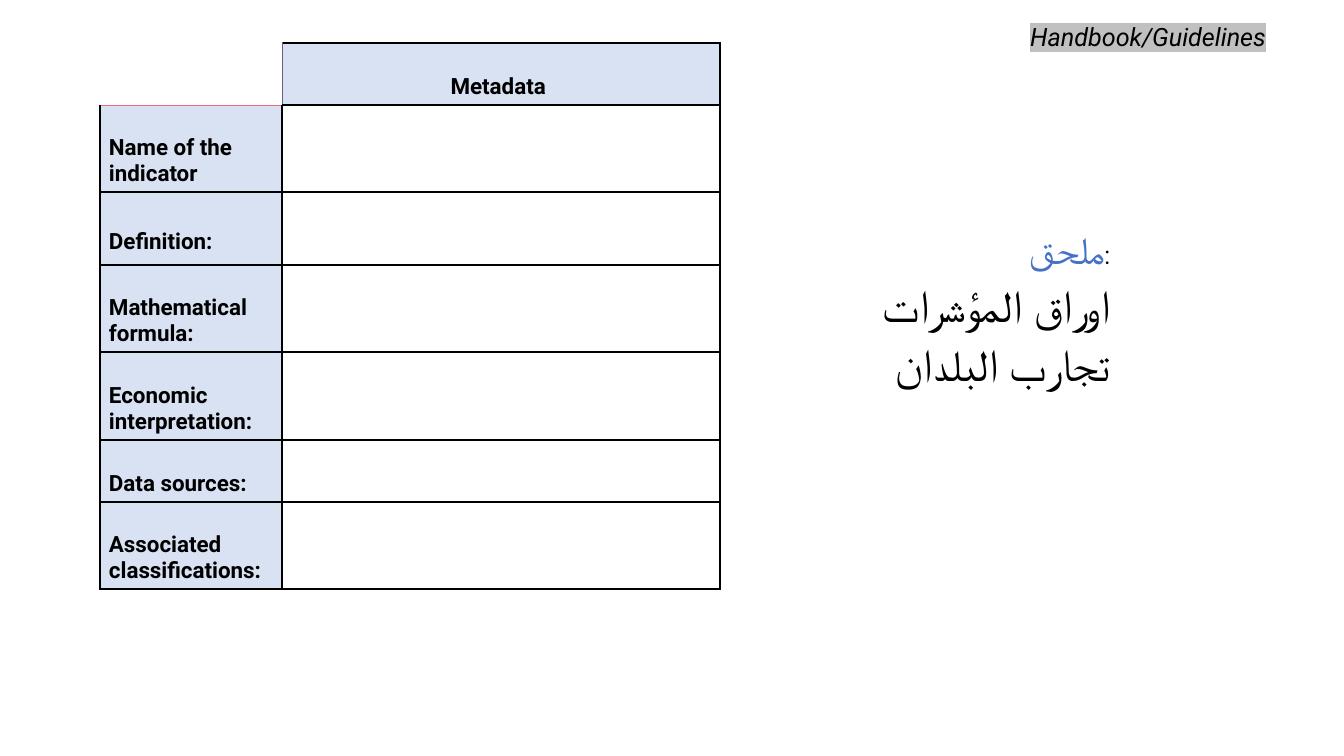
from dataclasses import dataclass
from typing import Any

from lxml.etree import SubElement
from pptx import Presentation
from pptx.dml.color import RGBColor
from pptx.enum.text import MSO_ANCHOR, PP_ALIGN
from pptx.oxml.ns import qn
from pptx.slide import Slide
from pptx.table import _Cell as Cell
from pptx.util import Emu, Pt

PX = 914400 * 10 // 1008
BLACK = RGBColor(0x00, 0x00, 0x00)
WHITE = RGBColor(0xFF, 0xFF, 0xFF)
BLUE = RGBColor(0x44, 0x72, 0xC4)
PALE_BLUE = RGBColor(0xD9, 0xE2, 0xF3)
SILVER = RGBColor(0xC0, 0xC0, 0xC0)
PURPLE = RGBColor(0x70, 0x5B, 0x7F)
PINK = RGBColor(0xF0, 0x68, 0x7F)


@dataclass(frozen=True)
class Run:
    text: str
    size: int
    font: str
    color: RGBColor = BLACK
    bold: bool = False
    italic: bool = False
    highlight: RGBColor | None = None


@dataclass(frozen=True)
class Line:
    runs: tuple[Run, ...]
    align: PP_ALIGN = PP_ALIGN.RIGHT
    spacing: float | None = None
    before: float = 0
    right_to_left: bool = False


@dataclass(frozen=True)
class TextBlock:
    left: int
    top: int
    width: int
    height: int
    lines: tuple[Line, ...]


@dataclass(frozen=True)
class Border:
    color: RGBColor
    points: float


@dataclass(frozen=True)
class MetadataRow:
    label: str
    height: int
    bottom_margin: int = 5


SOLID = Border(BLACK, 1.5)
THIN_PURPLE = Border(PURPLE, 0.5)
THIN_PINK = Border(PINK, 0.5)
ALL_SOLID = dict.fromkeys(("L", "R", "T", "B"), SOLID)

HEADER_HEIGHT = 62
COLUMN_WIDTHS = (182, 438)
ROWS = (
    MetadataRow("Name of the indicator ", 87),
    MetadataRow("Definition: ", 73, 10),
    MetadataRow("Mathematical formula: ", 87),
    MetadataRow("Economic interpretation: ", 88),
    MetadataRow("Data sources: ", 62),
    MetadataRow("Associated classifications: ", 87),
)
ANNEX_SPACING = {"spacing": 0.9, "before": 7.5}
TEXT_BLOCKS = (
    TextBlock(735, 16, 541, 54, (
        Line((Run("Handbook/Guidelines", 18, "Roboto", italic=True, highlight=SILVER),)),
    )),
    TextBlock(290, 226, 830, 338, (
        Line((Run("ملحق", 28, "Montserrat", BLUE), Run(":", 18, "Montserrat")), **ANNEX_SPACING),
        Line((Run("اوراق المؤشرات ", 32, "Montserrat"),), right_to_left=True, **ANNEX_SPACING),
        Line((Run("تجارب البلدان", 32, "Montserrat"),), **ANNEX_SPACING),
    )),
)


def px(length: int) -> Emu:
    return Emu(length * PX)


def set_format(target: Any, values: dict[str, Any]) -> None:
    for name, value in values.items():
        setattr(target, name, value)


def write_line(paragraph: Any, line: Line) -> None:
    set_format(paragraph, {
        "alignment": line.align,
        "line_spacing": line.spacing,
        "space_before": Pt(line.before),
    })
    if line.right_to_left:
        paragraph._p.get_or_add_pPr().set("rtl", "1")
    for item in line.runs:
        run = paragraph.add_run()
        run.text = item.text
        set_format(run.font, {
            "size": Pt(item.size),
            "name": item.font,
            "bold": item.bold,
            "italic": item.italic,
        })
        run.font.color.rgb = item.color
        properties = run._r.get_or_add_rPr()
        SubElement(properties, qn("a:cs"), typeface=item.font)
        if item.highlight is not None:
            highlight = SubElement(properties, qn("a:highlight"))
            SubElement(highlight, qn("a:srgbClr"), val=str(item.highlight))
            properties.find(qn("a:solidFill")).addnext(highlight)


def add_text_block(slide: Slide, block: TextBlock) -> None:
    shape = slide.shapes.add_textbox(
        px(block.left), px(block.top), px(block.width), px(block.height)
    )
    frame = shape.text_frame
    frame.word_wrap = True
    for index, line in enumerate(block.lines):
        paragraph = frame.add_paragraph() if index else frame.paragraphs[0]
        write_line(paragraph, line)


def style_cell(cell: Cell, fill: RGBColor, borders: dict[str, Border]) -> None:
    cell.fill.solid()
    cell.fill.fore_color.rgb = fill
    properties = cell._tc.get_or_add_tcPr()
    for index, (side, border) in enumerate(borders.items()):
        edge = SubElement(properties, qn(f"a:ln{side}"), w=str(Pt(border.points)))
        solid = SubElement(edge, qn("a:solidFill"))
        SubElement(solid, qn("a:srgbClr"), val=str(border.color))
        properties.insert(index, edge)


def write_label(cell: Cell, text: str, align: PP_ALIGN, bottom_margin: int) -> None:
    set_format(cell, {
        "vertical_anchor": MSO_ANCHOR.BOTTOM,
        "margin_left": px(9),
        "margin_right": px(9),
        "margin_top": px(5),
        "margin_bottom": px(bottom_margin),
    })
    run = Run(text, 16, "Roboto", bold=True)
    write_line(cell.text_frame.paragraphs[0], Line((run,), align))


def add_metadata_table(slide: Slide) -> None:
    heights = (HEADER_HEIGHT, *(row.height for row in ROWS))
    table = slide.shapes.add_table(
        len(heights), len(COLUMN_WIDTHS),
        px(100), px(43), px(sum(COLUMN_WIDTHS)), px(sum(heights)),
    ).table
    set_format(table, {"first_row": False, "horz_banding": False})
    for column, width in zip(table.columns, COLUMN_WIDTHS):
        column.width = px(width)
    for table_row, height in zip(table.rows, heights):
        table_row.height = px(height)

    style_cell(table.cell(0, 0), WHITE, {"R": THIN_PURPLE, "B": THIN_PINK})
    header = table.cell(0, 1)
    style_cell(header, PALE_BLUE, ALL_SOLID | {"L": THIN_PURPLE})
    write_label(header, "Metadata ", PP_ALIGN.CENTER, 5)
    for index, row in enumerate(ROWS, start=1):
        label = table.cell(index, 0)
        top = THIN_PINK if index == 1 else SOLID
        style_cell(label, PALE_BLUE, ALL_SOLID | {"T": top})
        write_label(label, row.label, PP_ALIGN.LEFT, row.bottom_margin)
        style_cell(table.cell(index, 1), WHITE, ALL_SOLID)


def main() -> None:
    presentation = Presentation()
    set_format(presentation, {"slide_width": px(1344), "slide_height": px(756)})
    slide = presentation.slides.add_slide(presentation.slide_layouts[6])
    for block in TEXT_BLOCKS:
        add_text_block(slide, block)
    add_metadata_table(slide)
    presentation.save("out.pptx")


if __name__ == "__main__":
    main()
